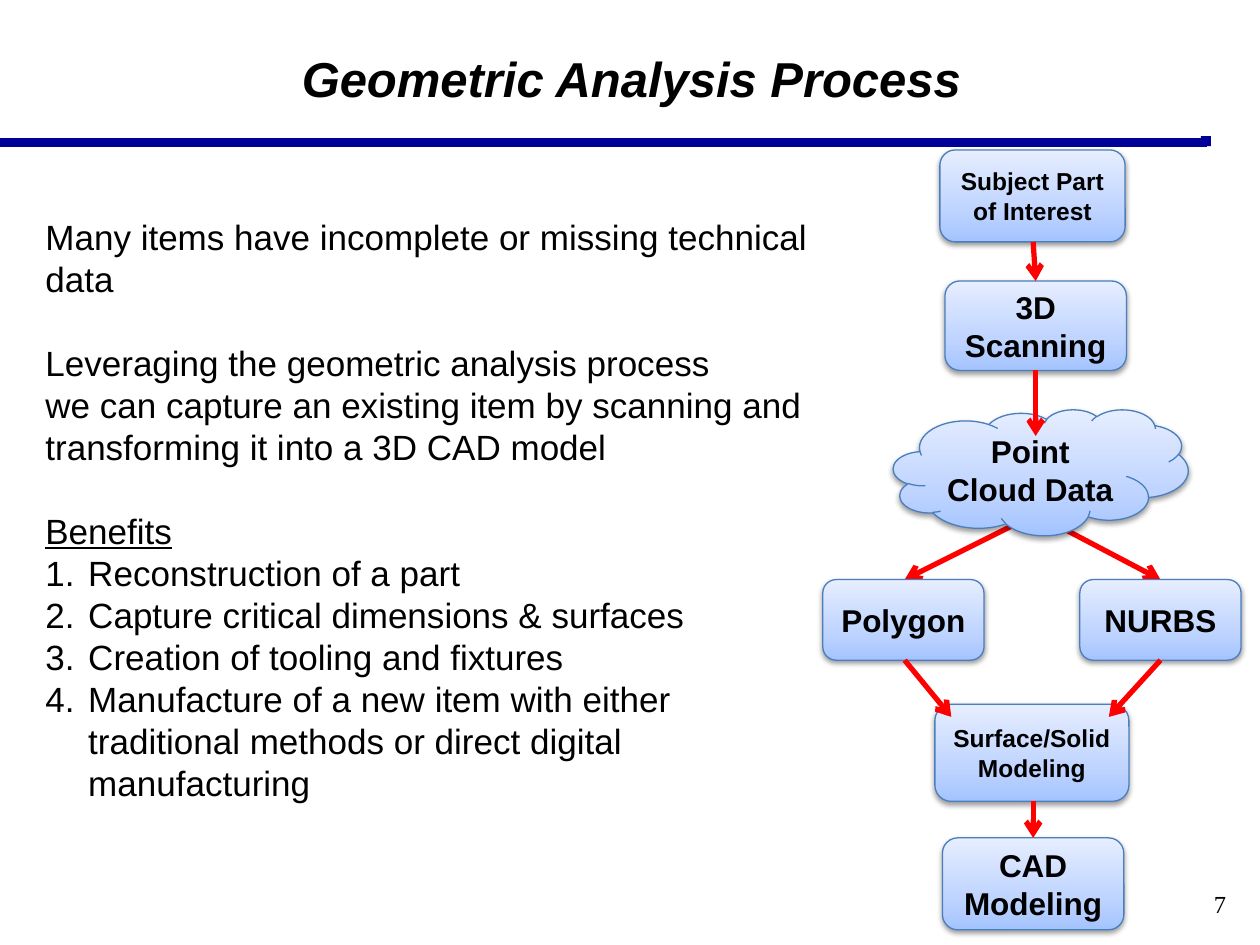
from copy import deepcopy
from pptx import Presentation
from pptx.dml.color import RGBColor as RGB
from pptx.enum.shapes import MSO_CONNECTOR as Link, MSO_SHAPE as Kind
from pptx.enum.text import MSO_ANCHOR as Anchor, PP_ALIGN as Align
from pptx.oxml import parse_xml
from pptx.oxml.ns import nsdecls, qn
from pptx.util import Inches, Pt

BLACK = RGB(0x00, 0x00, 0x00)
NAVY = RGB(0x00, 0x00, 0x99)
RED = RGB(0xFF, 0x00, 0x00)
EDGE = RGB(0x4B, 0x7E, 0xBC)
SHADES = [(0, RGB(0xA4, 0xC4, 0xFF)), (0.35, RGB(0xBF, 0xD4, 0xFF)), (1, RGB(0xE6, 0xEE, 0xFF))]
INSETS = (0.09, 0.04)
GLOW = (
    f'<a:effectLst {nsdecls("a")}><a:outerShdw blurRad="{Pt(3.1)}" dist="{Pt(1.6)}" '
    'dir="5400000" rotWithShape="0"><a:srgbClr val="000000"><a:alpha val="38000"/>'
    '</a:srgbClr></a:outerShdw></a:effectLst>'
)


def write(frame, text, size=20, font="Arial", bold=False, italic=False, under=False,
          align=Align.LEFT, gap=0, space=None, number=False, first=True):
    """Write one paragraph into a text frame."""
    para = frame.paragraphs[0] if first else frame.add_paragraph()
    para.alignment = align
    if gap:
        para.space_before = Pt(gap)
    if space:
        para.line_spacing = space
    if number:
        props = para._p.get_or_add_pPr()
        props.set("marL", str(Inches(0.34)))
        props.set("indent", str(Inches(-0.34)))
        props.append(parse_xml(f'<a:buAutoNum {nsdecls("a")} type="arabicPeriod"/>'))
    run = para.add_run()
    run.text = text
    style = run.font
    style.name, style.size, style.color.rgb = font, Pt(size), BLACK
    style.bold, style.italic, style.underline = bold, italic, under


class Deck:
    """Hold the style and the current slide."""

    def __init__(self):
        self.file = Presentation()
        self.file.slide_width, self.file.slide_height = Inches(10), Inches(7.5)
        self.slide = self.file.slides.add_slide(self.file.slide_layouts[6])
        self.shapes = self.slide.shapes

    def frame(self, shape, insets=INSETS):
        frame = shape.text_frame
        frame.word_wrap = True
        frame.margin_left = frame.margin_right = Inches(insets[0])
        frame.margin_top = frame.margin_bottom = Inches(insets[1])
        return frame

    def text(self, area, insets=INSETS):
        return self.frame(self.shapes.add_textbox(*map(Inches, area)), insets)

    def line(self, start, end, color=RED, width=3, arrow=True):
        link = self.shapes.add_connector(Link.STRAIGHT, *map(Inches, start + end))
        link.line.color.rgb, link.line.width = color, Pt(width)
        if arrow:
            link.line._get_or_add_ln().append(
                parse_xml(f'<a:tailEnd {nsdecls("a")} type="arrow"/>'))
        link._element.spPr.append(parse_xml(f'<a:effectLst {nsdecls("a")}/>'))

    def block(self, area, color):
        shape = self.shapes.add_shape(Kind.RECTANGLE, *map(Inches, area))
        shape.shadow.inherit = False
        shape.fill.solid()
        shape.fill.fore_color.rgb = color
        shape.line.fill.background()

    def node(self, area, label, size=18, kind=Kind.ROUNDED_RECTANGLE):
        shape = self.shapes.add_shape(kind, *map(Inches, area))
        fill = shape.fill
        fill.gradient()
        fill.gradient_angle = 90
        stops = shape._element.spPr.find(".//" + qn("a:gsLst"))
        stops.insert(1, deepcopy(stops[0]))
        for stop, (place, color) in zip(fill.gradient_stops, SHADES):
            stop.position, stop.color.rgb = place, color
        shape.line.color.rgb, shape.line.width = EDGE, Pt(0.75)
        shape._element.spPr.append(parse_xml(GLOW))
        frame = self.frame(shape)
        frame.vertical_anchor = Anchor.MIDDLE
        write(frame, label, size=size, bold=True, align=Align.CENTER)


def main():
    deck = Deck()
    deck.line((0, 1.13), (9.58, 1.13), NAVY, 5, arrow=False)
    deck.block((9.53, 1.08, 0.08, 0.08), NAVY)
    for x in (7.18, 9.21):
        deck.line((8.22, 4.08), (x, 4.6))

    write(deck.text((1.45, 0.4, 7.12, 0.51)), "Geometric Analysis Process", size=28,
          bold=True, italic=True, align=Align.CENTER, space=0.9)

    body = deck.text((0.27, 1.67, 6.42, 4.47))
    write(body, "Many items have incomplete or missing technical data")
    write(body, "Leveraging the geometric analysis process", gap=24, first=False)
    write(body, "we can capture an existing item by scanning and transforming it into a 3D CAD model",
          first=False)
    write(body, "Benefits", under=True, gap=24, first=False)
    for gain in (
        "Reconstruction of a part",
        "Capture critical dimensions & surfaces",
        "Creation of tooling and fixtures",
        "Manufacture of a new item with either traditional methods or direct digital manufacturing",
    ):
        write(body, gain, number=True, first=False)

    deck.node((7.09, 3.25, 2.34, 1), "Point Cloud Data", kind=Kind.CLOUD)
    for area, label, size in (
        ((7.46, 1.19, 1.47, 0.73), "Subject Part of Interest", 14),
        ((7.5, 2.23, 1.44, 0.71), "3D Scanning", 18),
        ((6.53, 4.6, 1.28, 0.64), "Polygon", 18),
        ((8.57, 4.6, 1.28, 0.64), "NURBS", 18),
        ((7.42, 5.59, 1.54, 0.77), "Surface/Solid Modeling", 14),
        ((7.48, 6.65, 1.44, 0.73), "CAD Modeling", 18),
    ):
        deck.node(area, label, size)

    for start, end in (
        ((8.2, 1.92), (8.22, 2.23)),
        ((8.22, 2.94), (8.22, 3.46)),
        ((7.18, 5.24), (7.55, 5.69)),
        ((9.21, 5.24), (8.8, 5.69)),
        ((8.2, 6.36), (8.2, 6.65)),
    ):
        deck.line(start, end)

    write(deck.text((9.25, 7.01, 0.58, 0.5), (0.1, 0.05)), "7", size=14,
          font="Times New Roman", align=Align.RIGHT)
    deck.file.save("out.pptx")


if __name__ == "__main__":
    main()
